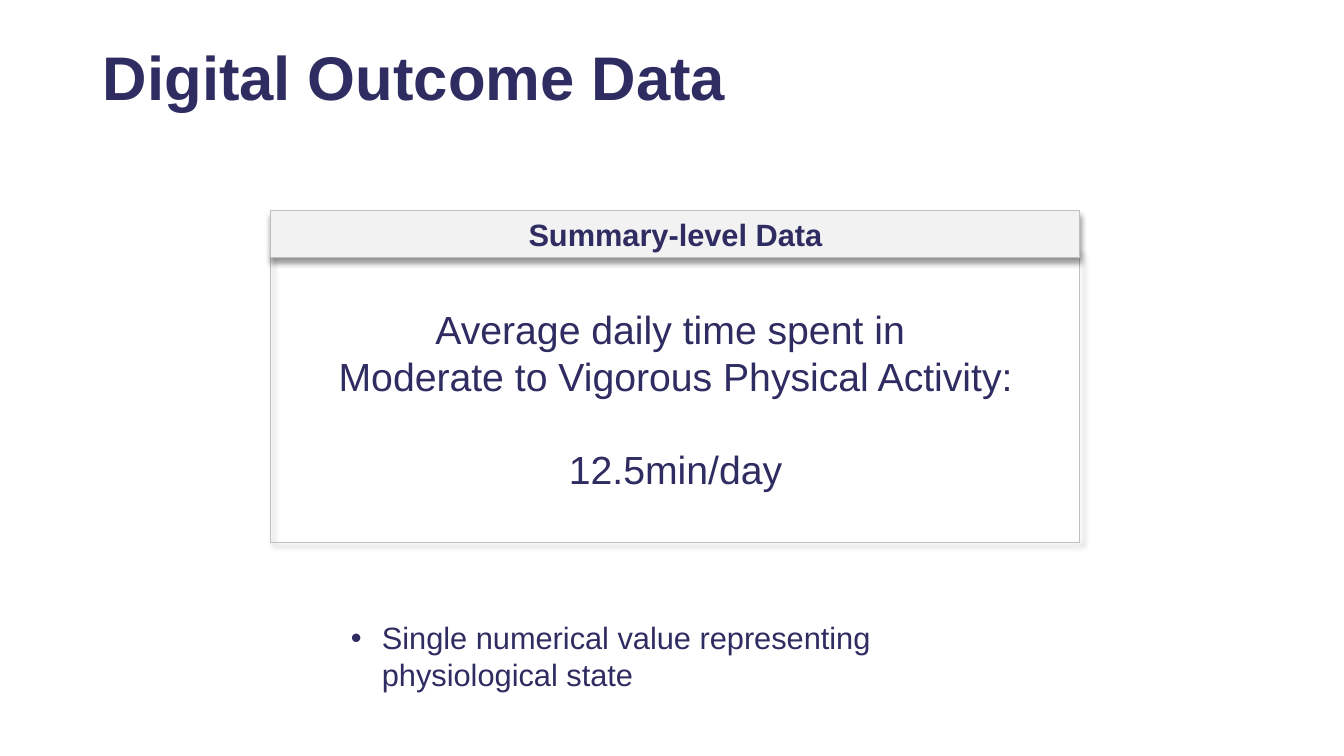
from lxml.etree import SubElement
from pptx import Presentation
from pptx.dml.color import RGBColor
from pptx.enum.shapes import MSO_SHAPE
from pptx.enum.text import MSO_ANCHOR, PP_ALIGN
from pptx.oxml.ns import qn
from pptx.util import Emu, Pt

NAVY = RGBColor(0x2E, 0x2C, 0x61)
PALE = RGBColor(0xF2, 0xF2, 0xF2)
GREY = RGBColor(0xBF, 0xBF, 0xBF)
CARD_LEFT, CARD_WIDTH = 271, 809


def px(n):
    """Turn pixels into EMU."""
    return Emu(round(n * 914400 / 100.8))


def box_at(left, top, width, height):
    """Turn a pixel box into EMU lengths."""
    return [px(n) for n in (left, top, width, height)]


def style(p, size, bold=False, align=PP_ALIGN.LEFT):
    """Set the font and alignment of a paragraph."""
    p.alignment = align
    p.font.name = "Arial"
    p.font.size = Pt(size)
    p.font.bold = bold
    p.font.color.rgb = NAVY


def add_shadow(s, angle):
    """Give a shape a soft outer shadow."""
    s.shadow.inherit = False
    effects = s._element.spPr.find(qn("a:effectLst"))
    shadow = SubElement(effects, qn("a:outerShdw"), blurRad=str(Pt(4)),
                        dist=str(Pt(3)), dir=str(angle * 60000),
                        algn="ctr", rotWithShape="0")
    color = SubElement(shadow, qn("a:srgbClr"), val="000000")
    SubElement(color, qn("a:alpha"), val="40000")


def add_panel(slide, top, height, angle, fill=None):
    """Add a grey-edged rectangle of the card."""
    s = slide.shapes.add_shape(
        MSO_SHAPE.RECTANGLE, *box_at(CARD_LEFT, top, CARD_WIDTH, height))
    if fill is None:
        s.fill.background()
    else:
        s.fill.solid()
        s.fill.fore_color.rgb = fill
    s.line.color.rgb = GREY
    s.line.width = Pt(0.75)
    add_shadow(s, angle)
    return s


def add_text(slide, box, paragraphs, size, bold=False, align=PP_ALIGN.LEFT,
             anchor=MSO_ANCHOR.TOP):
    """Add a wrapped text box and return its paragraphs."""
    tf = slide.shapes.add_textbox(*box_at(*box)).text_frame
    tf.word_wrap = True
    tf.vertical_anchor = anchor
    tf.text = "\n".join(paragraphs)
    for p in tf.paragraphs:
        style(p, size, bold, align)
    return tf.paragraphs


def add_bullet(p, indent):
    """Give a paragraph a hanging bullet."""
    pPr = p._p.get_or_add_pPr()
    pPr.set("marL", str(px(indent)))
    pPr.set("indent", str(-px(indent)))
    font = pPr.makeelement(qn("a:buFont"), {"typeface": "Arial"})
    char = pPr.makeelement(qn("a:buChar"), {"char": "•"})
    pPr.insert(0, font)
    pPr.insert(1, char)


def main():
    """Build and save the slide."""
    prs = Presentation()
    prs.slide_width, prs.slide_height = px(1344), px(756)
    slide = prs.slides.add_slide(prs.slide_layouts[6])

    add_panel(slide, 252, 291, 45)
    title, = add_text(slide, (93, 8, 1159, 146), ["Digital Outcome Data"], 44,
                      bold=True, anchor=MSO_ANCHOR.MIDDLE)
    title.line_spacing = 0.9

    header = add_panel(slide, 211, 47, 90, PALE)
    tf = header.text_frame
    tf.text = "Summary-level Data"
    tf.vertical_anchor = MSO_ANCHOR.TOP
    style(tf.paragraphs[0], 22, True, PP_ALIGN.CENTER)

    measure, value = add_text(
        slide, (CARD_LEFT, 300, CARD_WIDTH, 201),
        ["Average daily time spent in \vModerate to Vigorous Physical Activity:",
         "12.5min/day"], 28, align=PP_ALIGN.CENTER)
    value.space_before = Pt(33)

    note, = add_text(slide, (341, 614, 549, 115),
                     ["Single numerical value representing physiological state"],
                     22)
    add_bullet(note, 31)
    prs.save("out.pptx")


if __name__ == "__main__":
    main()
